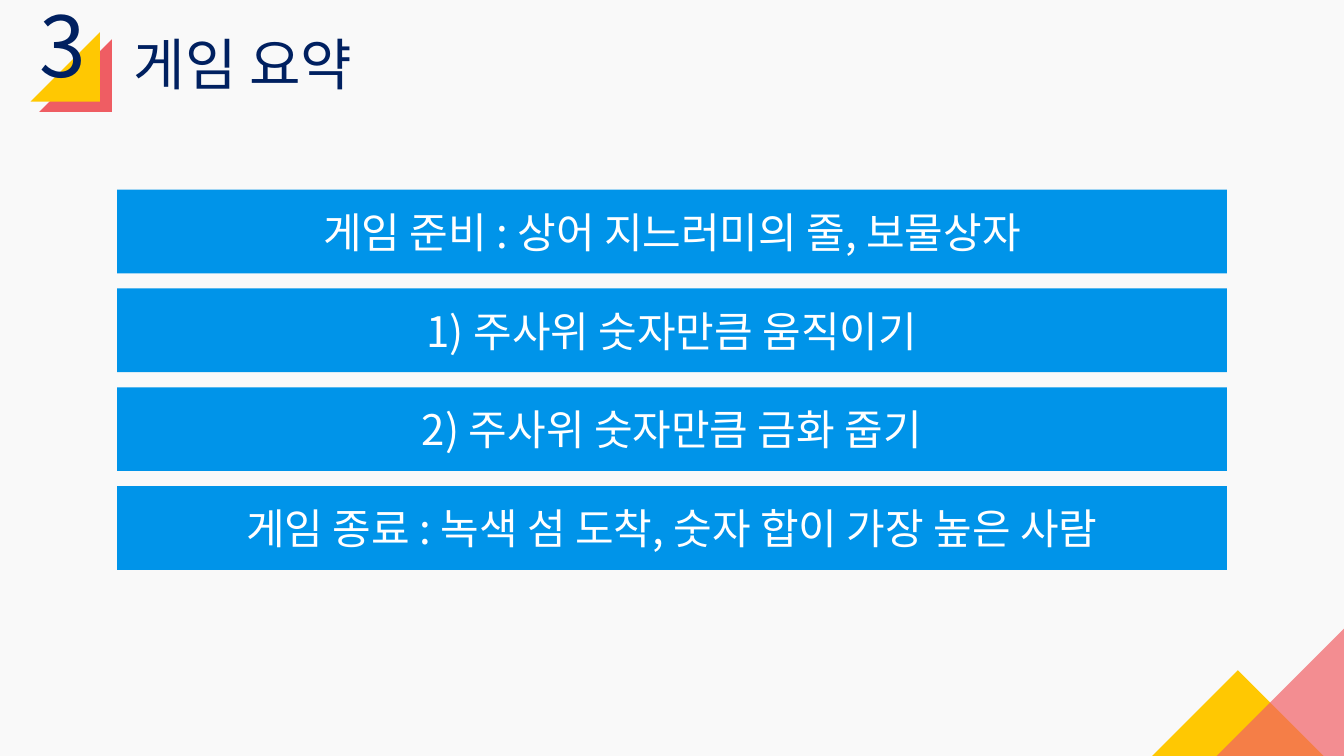
from dataclasses import dataclass

from lxml.etree import SubElement
from pptx import Presentation
from pptx.dml.color import RGBColor
from pptx.enum.shapes import MSO_SHAPE as Shape
from pptx.enum.text import MSO_ANCHOR as Anchor, MSO_AUTO_SIZE as AutoSize, PP_ALIGN as Align
from pptx.oxml.ns import qn
from pptx.util import Cm, Pt


@dataclass(frozen=True)
class Theme:
    font: str = "Noto Sans CJK KR"
    background: str = "F9F9F9"
    navy: str = "002060"
    blue: str = "0094E9"
    white: str = "FFFFFF"
    yellow: str = "FFC802"
    red: str = "EB1C24"
    coral: str = "F16065"
    number_size: int = 60
    title_size: int = 40
    bar_size: int = 30


THEME = Theme()
STEPS = [
    "게임 준비 : 상어 지느러미의 줄, 보물상자",
    "1) 주사위 숫자만큼 움직이기",
    "2) 주사위 숫자만큼 금화 줍기",
    "게임 종료 : 녹색 섬 도착, 숫자 합이 가장 높은 사람",
]


def write_text(shape, text, *, size, color, align=Align.LEFT, anchor=Anchor.TOP, spacing=1.0):
    frame = shape.text_frame
    frame.word_wrap = True
    frame.auto_size = AutoSize.NONE
    frame.vertical_anchor = anchor
    para = frame.paragraphs[0]
    para.alignment = align
    para.line_spacing = spacing
    span = para.add_run()
    span.text = text
    span.font.size = Pt(size)
    span.font.color.rgb = RGBColor.from_string(color)
    span.font.name = THEME.font
    # Korean letters take their typeface from the East Asian font slot.
    SubElement(span.font._element, qn("a:ea"), typeface=THEME.font)


def add_filled(page, kind, left, top, width, height, color):
    shape = page.shapes.add_shape(kind, Cm(left), Cm(top), Cm(width), Cm(height))
    shape.shadow.inherit = False
    shape.fill.solid()
    shape.fill.fore_color.rgb = RGBColor.from_string(color)
    shape.line.fill.background()
    return shape


def add_triangle(page, left, top, side, color, rotation=270, opacity=100):
    triangle = add_filled(page, Shape.RIGHT_TRIANGLE, left, top, side, side, color)
    triangle.rotation = rotation
    if opacity < 100:
        color_element = triangle.fill._xPr.find(qn("a:solidFill"))[0]
        SubElement(color_element, qn("a:alpha"), val=str(opacity * 1000))


def add_number(page, text):
    box = page.shapes.add_textbox(Cm(0.74), Cm(0), Cm(2.39), Cm(2.82))
    write_text(box, text, size=THEME.number_size, color=THEME.navy, spacing=0.9)


def set_title(page, text):
    title = page.shapes.title
    title.left, title.top, title.width, title.height = Cm(3.12), Cm(0.82), Cm(28.63), Cm(1.96)
    write_text(title, text, size=THEME.title_size, color=THEME.navy, spacing=0.9)


def add_bars(page, texts, left=2.95, top=4.78, width=27.97, height=2.11, pitch=2.49):
    for index, text in enumerate(texts):
        bar = add_filled(page, Shape.RECTANGLE, left, top + index * pitch, width, height, THEME.blue)
        write_text(bar, text, size=THEME.bar_size, color=THEME.white,
                   align=Align.CENTER, anchor=Anchor.MIDDLE)


def main():
    deck = Presentation()
    deck.slide_width, deck.slide_height = Cm(33.87), Cm(19.05)
    page = deck.slides.add_slide(deck.slide_layouts[5])
    page.background.fill.solid()
    page.background.fill.fore_color.rgb = RGBColor.from_string(THEME.background)

    add_triangle(page, 0.99, 0.99, 1.83, THEME.red, opacity=70)
    add_triangle(page, 0.77, 0.81, 1.75, THEME.yellow)
    add_triangle(page, 29.62, 17.54, 3.15, THEME.yellow, rotation=135)
    add_triangle(page, 30.59, 15.84, 3.28, THEME.coral, opacity=70)

    add_number(page, "3")
    set_title(page, "게임 요약")
    add_bars(page, STEPS)
    deck.save("out.pptx")


if __name__ == "__main__":
    main()
